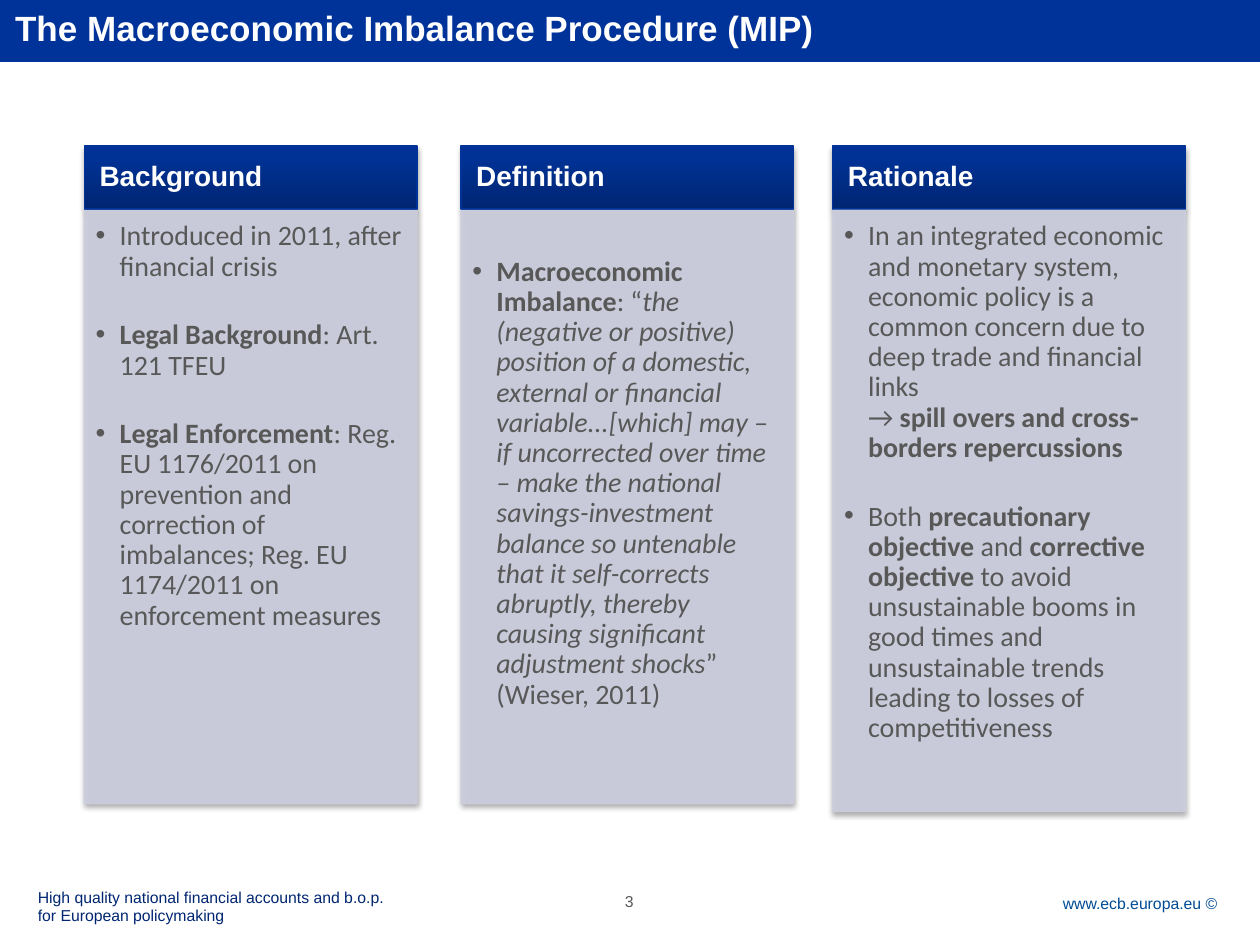
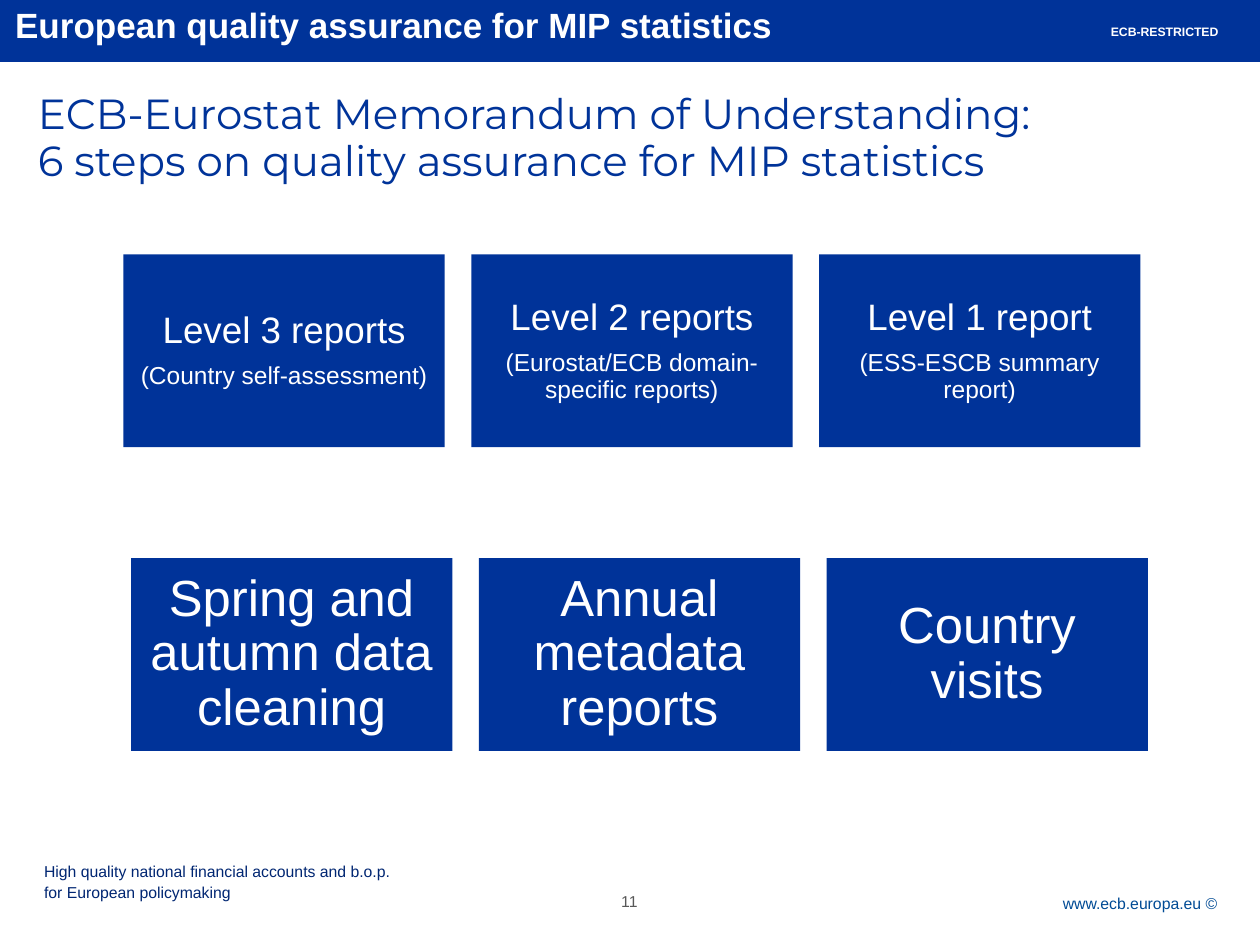
from lxml import etree
from pptx import Presentation, util as u
from pptx.dml.color import RGBColor
from pptx.enum import shapes, text
from pptx.oxml import ns

BLUE = RGBColor(0x00, 0x33, 0x99)
NAVY = RGBColor(0x00, 0x26, 0x72)
ROYAL = RGBColor(0x00, 0x31, 0x94)
LINK = RGBColor(0x00, 0x4B, 0x95)
PALE = RGBColor(0xCC, 0xCE, 0xDE)
GREY = RGBColor(0x58, 0x58, 0x58)
BLACK = RGBColor(0x00, 0x00, 0x00)
WHITE = RGBColor(0xFF, 0xFF, 0xFF)

PX = 9144
LEFT, MID, RIGHT = text.PP_ALIGN.LEFT, text.PP_ALIGN.CENTER, text.PP_ALIGN.RIGHT
SITE = "www.ecb.europa.eu ©"
EVENT = "High quality national financial accounts and b.o.p.\nfor European policymaking"

COLUMNS = [
    (67, 264, 471, 9, "Background", [
        "Introduced in 2011, after financial crisis",
        [("Legal Background", "b"), (": Art. 121 TFEU", "")],
        [("Legal Enforcement", "b"),
         (": Reg. EU 1176/2011 on prevention and correction of imbalances; "
          "Reg. EU 1174/2011 on enforcement measures", "")],
    ]),
    (366, 264, 471, 37, "Definition", [
        [("Macroeconomic Imbalance", "b"), (": “", ""),
         ("the (negative or positive) position of a domestic, external or "
          "financial variable...[which] may – if uncorrected over time – make "
          "the national savings-investment balance so untenable that it "
          "self-corrects abruptly, thereby causing significant adjustment shocks", "i"),
         ("” (Wieser, 2011)", "")],
    ]),
    (661, 280, 477, 9, "Rationale", [
        [("In an integrated economic and monetary system, economic policy is a "
          "common concern due to deep trade and financial links", ""),
         ("\n", ""), ("→ ", ""),
         ("spill overs and cross-borders repercussions", "b")],
        [("Both ", ""), ("precautionary objective ", "b"), ("and ", ""),
         ("corrective objective", "b"),
         (" to avoid unsustainable booms in good times and unsustainable trends "
          "leading to losses of competitiveness", "")],
    ]),
]

REPORTS = [
    ["Level 3 reports", "(Country self-assessment)"],
    ["Level 2 reports", "(Eurostat/ECB domain-specific reports)"],
    ["Level 1 report", "(ESS-ESCB summary report)"],
]
CHECKS = [["Spring and autumn data cleaning"], ["Annual metadata reports"], ["Country visits"]]


def put(node, tag, **attrs):
    return etree.SubElement(node, ns.qn(tag), {k: str(v) for k, v in attrs.items()})


class Deck:
    def __init__(self):
        self.prs = Presentation()
        self.prs.slide_width, self.prs.slide_height = 1000 * PX, 750 * PX

    def page(self, layout, title, top, number, foot, lead):
        self.slide = self.prs.slides.add_slide(self.prs.slide_layouts[layout])
        band = self.rect(0, -3, 1000, 52, BLUE, BLUE)
        self.slide.shapes._spTree.insert(2, band._element)
        self.holder(self.slide.shapes.title, (12, top, 935, 39), title, 20, WHITE, bold=True)
        self.label((715, 708, 251, 21), SITE, 9, LINK, align=RIGHT, lead=u.Pt(12))
        self.label((*foot, 455, 32), EVENT, 9, NAVY, lead=u.Pt(lead))
        self.label((477, 708, 45, 26), str(number), 9, GREY, align=MID)

    def place(self, shape, box):
        shape.left, shape.top, shape.width, shape.height = (n * PX for n in box)

    def frame(self, shape, pads=(0, 0, 0, 0), anchor=text.MSO_ANCHOR.TOP):
        tf = shape.text_frame
        tf.word_wrap, tf.auto_size = True, text.MSO_AUTO_SIZE.NONE
        tf.vertical_anchor = anchor
        tf.margin_left, tf.margin_top, tf.margin_right, tf.margin_bottom = (n * PX for n in pads)
        return tf

    def prose(self, tf, paras, size, color, font="Arial", bold=False, align=LEFT,
              lead=None, after=0):
        for i, item in enumerate(paras):
            para = tf.add_paragraph() if i else tf.paragraphs[0]
            if isinstance(item, str):
                para.text = item
            else:
                self.mix(para, item)
            para.alignment, para.line_spacing = align, lead
            para.space_before = u.Pt(0)
            para.space_after = u.Pt(after if i < len(paras) - 1 else 0)
            for run in para.runs:
                face = run.font
                face.size, face.name, face.color.rgb = u.Pt(size), font, color
                if bold:
                    face.bold = True

    def mix(self, para, parts):
        for words, mark in parts:
            if words == "\n":
                para.add_line_break()
                continue
            run = para.add_run()
            run.text = words
            run.font.bold, run.font.italic = mark == "b", mark == "i"

    def holder(self, shape, box, words, size, color, **style):
        self.place(shape, box)
        tf = self.frame(shape)
        self.prose(tf, [words], size, color, **style)
        self.bullet(tf.paragraphs[0], 0)

    def label(self, box, words, size, color, **style):
        shape = self.slide.shapes.add_textbox(*(n * PX for n in box))
        self.prose(self.frame(shape), [words], size, color, **style)

    def rect(self, x, y, w, h, fill=None, line=None):
        shape = self.slide.shapes.add_shape(
            shapes.MSO_SHAPE.RECTANGLE, x * PX, y * PX, w * PX, h * PX)
        shape.shadow.inherit = False
        if fill is not None:
            shape.fill.solid()
            shape.fill.fore_color.rgb = fill
        if line is None:
            shape.line.fill.background()
        else:
            shape.line.color.rgb, shape.line.width = line, u.Pt(0.75)
        return shape

    def shade(self, shape):
        glow = put(shape._element.spPr.find(ns.qn("a:effectLst")), "a:outerShdw",
                   blurRad=u.Pt(3.1), dist=u.Pt(1.8), dir=5400000, rotWithShape=0)
        put(put(glow, "a:srgbClr", val=BLACK), "a:alpha", val=35000)

    def bullet(self, para, gap):
        props = para._p.get_or_add_pPr()
        props.set("marL", str(gap * PX))
        props.set("indent", str(-gap * PX))
        if gap:
            put(props, "a:buFont", typeface="Arial")
            put(props, "a:buChar", char="•")
        else:
            put(props, "a:buNone")

    def column(self, x, w, h, top, head, items):
        cap = self.rect(x, 116, w, 50, line=BLUE)
        cap.fill.gradient()
        cap.fill.gradient_angle = 90
        for stop, spot, color in zip(cap.fill.gradient_stops, (0, 0.8), (NAVY, ROYAL)):
            stop.position, stop.color.rgb = spot, color
        self.shade(cap)
        tf = self.frame(cap, (12, 7, 12, 7), text.MSO_ANCHOR.MIDDLE)
        self.prose(tf, [head], 16, WHITE, bold=True, lead=0.9)

        card = self.rect(x, 167, w, h, PALE, PALE)
        for tint in card._element.spPr.iter(ns.qn("a:srgbClr")):
            put(tint, "a:alpha", val=90000)
        self.shade(card)
        tf = self.frame(card, (9, top, 12, 14))
        self.prose(tf, items, 16, GREY, font="Calibri", lead=0.9, after=22)
        for para in tf.paragraphs:
            self.bullet(para, 19)

    def tiles(self, x, y, rows, size, pad):
        for i, lines in enumerate(rows):
            tile = self.rect(x + 276 * i, y, 255, 153, BLUE)
            tf = self.frame(tile, (pad,) * 4, text.MSO_ANCHOR.MIDDLE)
            self.prose(tf, lines, size, WHITE, align=MID, lead=0.9, after=7)
            for para in tf.paragraphs[1:]:
                para.runs[0].font.size = u.Pt(14)


def main():
    deck = Deck()
    deck.page(5, "The Macroeconomic Imbalance Procedure (MIP)", 5, 3, (30, 706), 10)
    for column in COLUMNS:
        deck.column(*column)

    deck.page(1, "European quality assurance for MIP statistics", 3, 11, (35, 682), 12)
    deck.holder(deck.slide.placeholders[1], (30, 72, 940, 69),
                "ECB-Eurostat Memorandum of Understanding:\n"
                "6 steps on quality assurance for MIP statistics",
                24, BLUE, font="Montserrat", lead=u.Pt(27))
    deck.label((768, 19, 199, 12), "ECB-RESTRICTED", 7, WHITE, bold=True, align=RIGHT)
    deck.tiles(98, 202, REPORTS, 21, 9)
    deck.tiles(104, 443, CHECKS, 29, 12)
    deck.prs.save("out.pptx")


if __name__ == "__main__":
    main()
